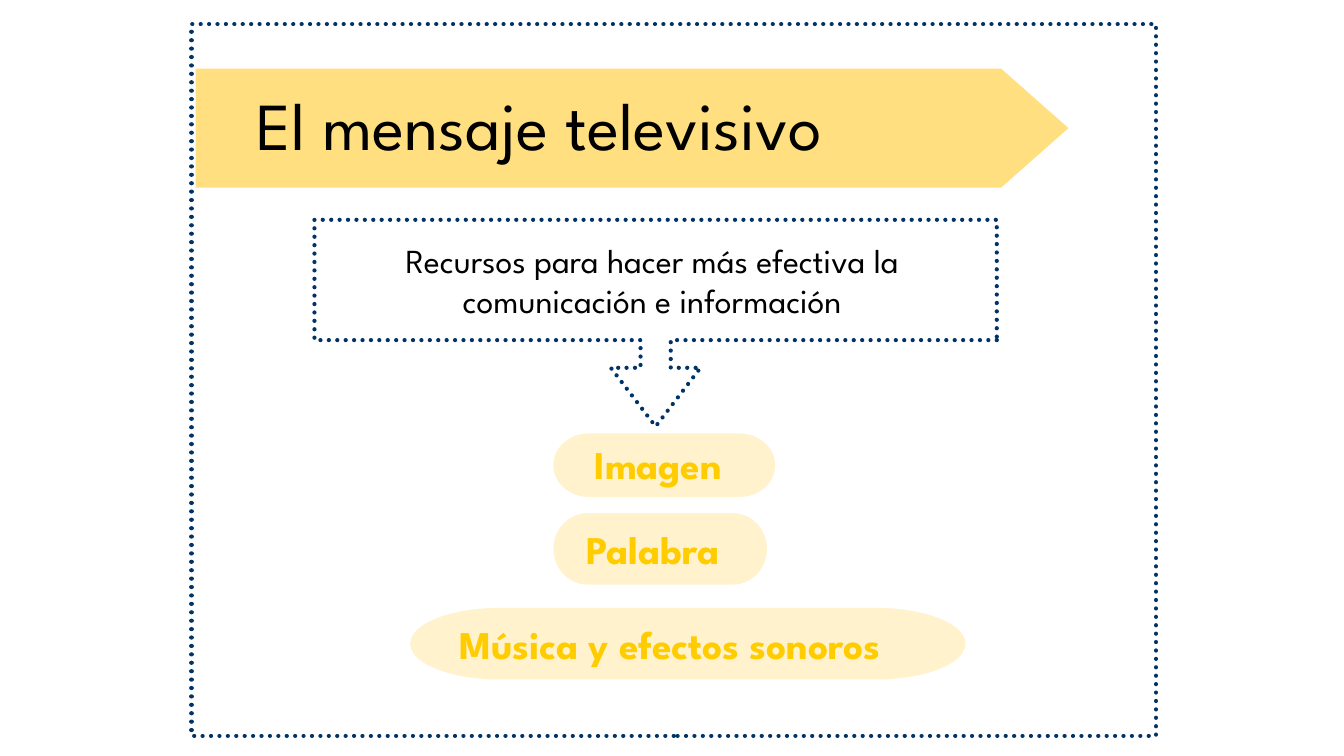
from lxml import etree
from pptx import Presentation
from pptx import util as u
from pptx.dml import color
from pptx.enum import dml, shapes, text
from pptx.oxml import ns

Pt = u.Pt
KIND = shapes.MSO_SHAPE
COLORS = {"amber": "FFC000", "gold": "FFCC00", "navy": "003366", "black": "000000"}
FONT = "League Spartan"


def rgb(name):
    return color.RGBColor.from_string(COLORS[name])


def apply(target, values):
    for name, value in values.items():
        setattr(target, name, value)


def add_plain(s, kind, box, adjustments=()):
    sp = s.shapes.add_shape(kind, *map(Pt, box))
    sp.shadow.inherit = False
    for i, value in enumerate(adjustments):
        sp.adjustments[i] = value
    return sp


def add_tint(s, kind, box, opacity, adjustments=()):
    sp = add_plain(s, kind, box, adjustments)
    sp.fill.solid()
    sp.fill.fore_color.rgb = rgb("amber")
    sp.line.fill.background()
    clr = sp._element.spPr.find(".//" + ns.qn("a:srgbClr"))
    etree.SubElement(clr, ns.qn("a:alpha")).set("val", str(opacity * 1000))


def add_dotted(s, kind, box, adjustments=(), rotation=0):
    sp = add_plain(s, kind, box, adjustments)
    sp.fill.background()
    sp.line.color.rgb = rgb("navy")
    apply(sp.line, {"width": Pt(3), "dash_style": dml.MSO_LINE.ROUND_DOT})
    sp._element.spPr.find(ns.qn("a:ln")).set("cap", "rnd")
    sp.rotation = rotation


def add_label(s, words, box, size, ink="black", bold=False, align=None, **frame):
    tf = s.shapes.add_textbox(*map(Pt, box)).text_frame
    apply(tf, {"word_wrap": True, **frame})
    p = tf.paragraphs[0]
    p.alignment = align
    r = p.add_run()
    r.text = words
    apply(r.font, {"name": FONT, "size": Pt(size), "bold": bold})
    r.font.color.rgb = rgb(ink)


def main():
    prs = Presentation()
    apply(prs, {"slide_width": Pt(960), "slide_height": Pt(540)})
    s = prs.slides.add_slide(prs.slide_layouts[6])
    grow = text.MSO_AUTO_SIZE.SHAPE_TO_FIT_TEXT

    resources = [
        ("Imagen", (395.3, 309.6, 158.4, 45.4), (417.6, 311, 120.2, 41), False),
        ("Palabra", (395.3, 366.5, 152.6, 51.1), (411.8, 371.5, 119.5, 41), False),
        ("Música y efectos sonoros", (293, 434.2, 396.7, 51.1), (321.1, 439.2, 368.6, 41), True),
    ]
    for _, pill, _, _ in resources:
        add_tint(s, KIND.FLOWCHART_TERMINATOR, pill, 20)

    add_tint(s, KIND.PENTAGON, (139.7, 49, 623.5, 85), 50, [0.566])
    add_label(s, "El mensaje televisivo", (156.2, 43.2, 648, 90), 48,
              margin_left=Pt(27), vertical_anchor=text.MSO_ANCHOR.MIDDLE)
    add_dotted(s, KIND.RECTANGLE, (136.8, 17.3, 689, 508.3))
    add_label(s, "Recursos para hacer más efectiva la comunicación e información",
              (230.4, 167.8, 470.9, 65.5), 24, align=text.PP_ALIGN.CENTER, auto_size=grow)

    for words, _, box, wrap in resources:
        add_label(s, words, box, 28, "gold", True, word_wrap=wrap, auto_size=grow)

    add_dotted(s, KIND.UP_ARROW_CALLOUT, (224.6, 157, 487.4, 147.6),
               [0.146, 0.217, 0.284, 0.582], 180)
    prs.save("out.pptx")


if __name__ == "__main__":
    main()
